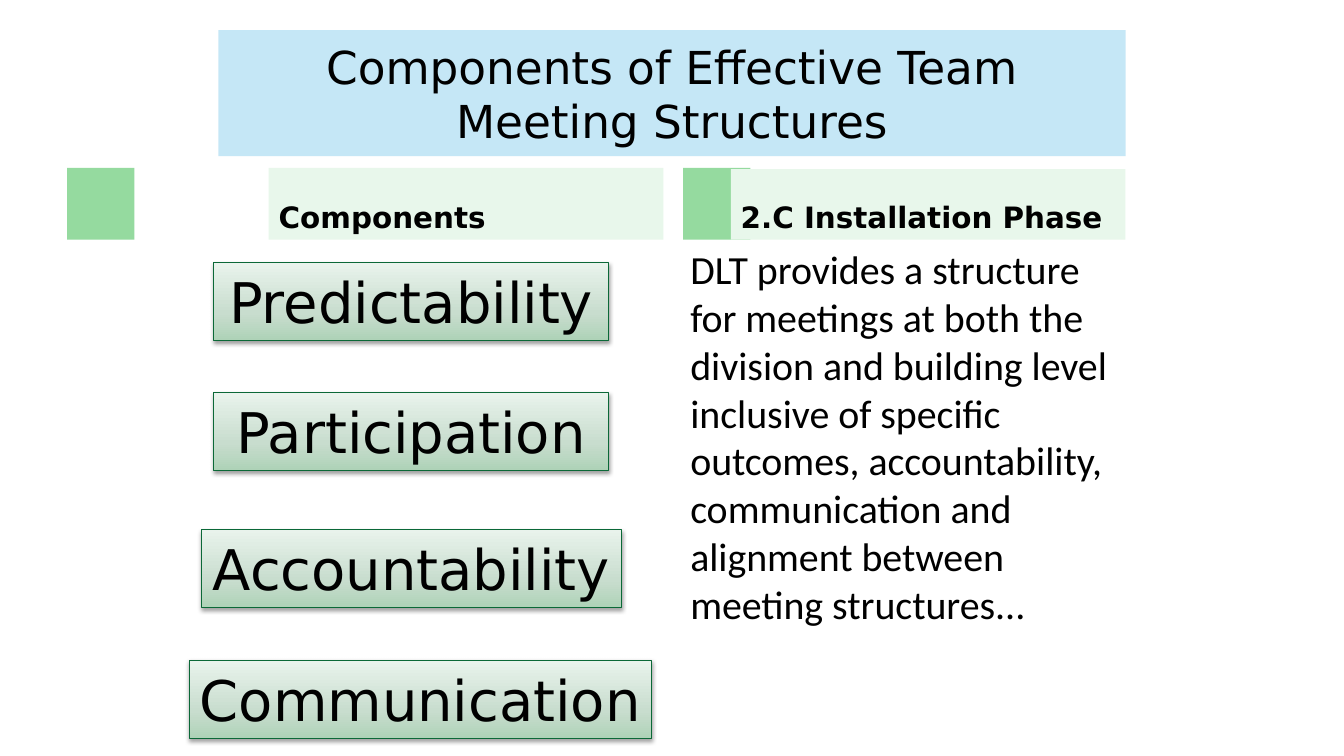
from copy import deepcopy

from lxml import etree
from pptx import Presentation
from pptx import util as u
from pptx.dml.color import RGBColor
from pptx.enum import shapes, text
from pptx.oxml.ns import qn

BLACK = RGBColor(0x00, 0x00, 0x00)
SKY = RGBColor(0xA9, 0xDC, 0xF2)
LEAF = RGBColor(0x95, 0xDA, 0x9F)
MINT = RGBColor(0xE8, 0xF7, 0xEB)
FOREST = RGBColor(0x0B, 0x68, 0x37)
GRADIENT = [
    (0, RGBColor(0xAE, 0xD2, 0xB7)),
    (0.35, RGBColor(0xC8, 0xDD, 0xCE)),
    (1, RGBColor(0xE9, 0xF3, 0xEC)),
]


class MeetingSlide:
    heading_font = "DejaVu Sans"
    body_font = "Calibri"

    def __init__(self, deck):
        self.slide = deck.slides.add_slide(deck.slide_layouts[5])

    def set_text(self, shape, wording, size, font=None, bold=False, side=7.2,
                 align=text.PP_ALIGN.LEFT, anchor=text.MSO_ANCHOR.TOP,
                 fit=text.MSO_AUTO_SIZE.NONE):
        frame = shape.text_frame
        frame.text = wording
        frame_format = {
            "word_wrap": True, "auto_size": fit, "vertical_anchor": anchor,
            "margin_left": u.Pt(side), "margin_right": u.Pt(side),
            "margin_top": u.Pt(3.6), "margin_bottom": u.Pt(3.6),
        }
        for name, value in frame_format.items():
            setattr(frame, name, value)
        paragraph = frame.paragraphs[0]
        paragraph.alignment = align
        run_font = paragraph.runs[0].font
        font_format = {"name": font or self.heading_font,
                       "size": u.Pt(size), "bold": bold}
        for name, value in font_format.items():
            setattr(run_font, name, value)
        run_font.color.rgb = BLACK

    def panel(self, left, top, width, height, colour=None):
        panel = self.slide.shapes.add_shape(
            shapes.MSO_SHAPE.RECTANGLE,
            u.Pt(left), u.Pt(top), u.Pt(width), u.Pt(height))
        panel.shadow.inherit = False
        panel.line.fill.background()
        if colour is not None:
            panel.fill.solid()
            panel.fill.fore_color.rgb = colour
        return panel

    def title(self, wording, left, top, width, height):
        title = self.slide.shapes.title
        place = {"left": left, "top": top, "width": width, "height": height}
        for name, value in place.items():
            setattr(title, name, u.Pt(value))
        title.fill.solid()
        title.fill.fore_color.rgb = SKY
        tint = title.element.spPr.find(".//" + qn("a:srgbClr"))
        etree.SubElement(tint, qn("a:alpha"), val="67000")
        self.set_text(title, wording, 32.4, side=12,
                      align=text.PP_ALIGN.CENTER, anchor=text.MSO_ANCHOR.MIDDLE)

    def heading(self, wording, left, top, width, height):
        heading = self.panel(left, top, width, height, MINT)
        self.set_text(heading, wording, 21, bold=True,
                      anchor=text.MSO_ANCHOR.BOTTOM)

    def component(self, wording, left, top, width, height):
        component = self.panel(left, top, width, height)
        component.line.color.rgb = FOREST
        component.line.width = u.Pt(0.75)
        component.fill.gradient()
        component.fill.gradient_angle = 90
        properties = component.element.spPr
        stop_list = properties.find(".//" + qn("a:gsLst"))
        stop_list.insert(1, deepcopy(stop_list[0]))
        for stop, (position, colour) in zip(component.fill.gradient_stops, GRADIENT):
            stop.position = position
            stop.color.rgb = colour
        shadow = etree.SubElement(
            properties.find(qn("a:effectLst")), qn("a:outerShdw"),
            blurRad=str(u.Pt(3.1)), dist=str(u.Pt(1.6)),
            dir="5400000", rotWithShape="0")
        shade = etree.SubElement(shadow, qn("a:srgbClr"), val=str(BLACK))
        etree.SubElement(shade, qn("a:alpha"), val="37000")
        self.set_text(component, wording, 40, align=text.PP_ALIGN.CENTER,
                      fit=text.MSO_AUTO_SIZE.SHAPE_TO_FIT_TEXT)

    def body(self, wording, left, top, width, height):
        body = self.slide.shapes.add_textbox(
            u.Pt(left), u.Pt(top), u.Pt(width), u.Pt(height))
        self.set_text(body, wording, 28.5, font=self.body_font)


def main():
    deck = Presentation()
    deck.slide_width, deck.slide_height = u.Pt(960), u.Pt(540)
    meeting = MeetingSlide(deck)

    for accent_left in (48, 488):
        meeting.panel(accent_left, 120, 48, 51.2, LEAF)

    components = [
        ("Predictability", 152.8, 187.5, 282),
        ("Participation", 152.8, 280.3, 282),
        ("Accountability", 144, 378.4, 300),
        ("Communication", 135.2, 471.8, 330),
    ]
    for wording, left, top, width in components:
        meeting.component(wording, left, top, width, 55.7)

    meeting.title("Components of Effective Team Meeting Structures",
                  156, 21.6, 648, 90)
    meeting.heading("Components", 192, 120, 282, 51.2)
    meeting.heading("2.C Installation Phase", 522, 120.8, 282, 50.4)
    meeting.body(
        "DLT provides a structure for meetings at both the division and "
        "building level inclusive of specific outcomes, accountability, "
        "communication and alignment between meeting structures...",
        486, 171.2, 318, 311)

    deck.save("out.pptx")


if __name__ == "__main__":
    main()
